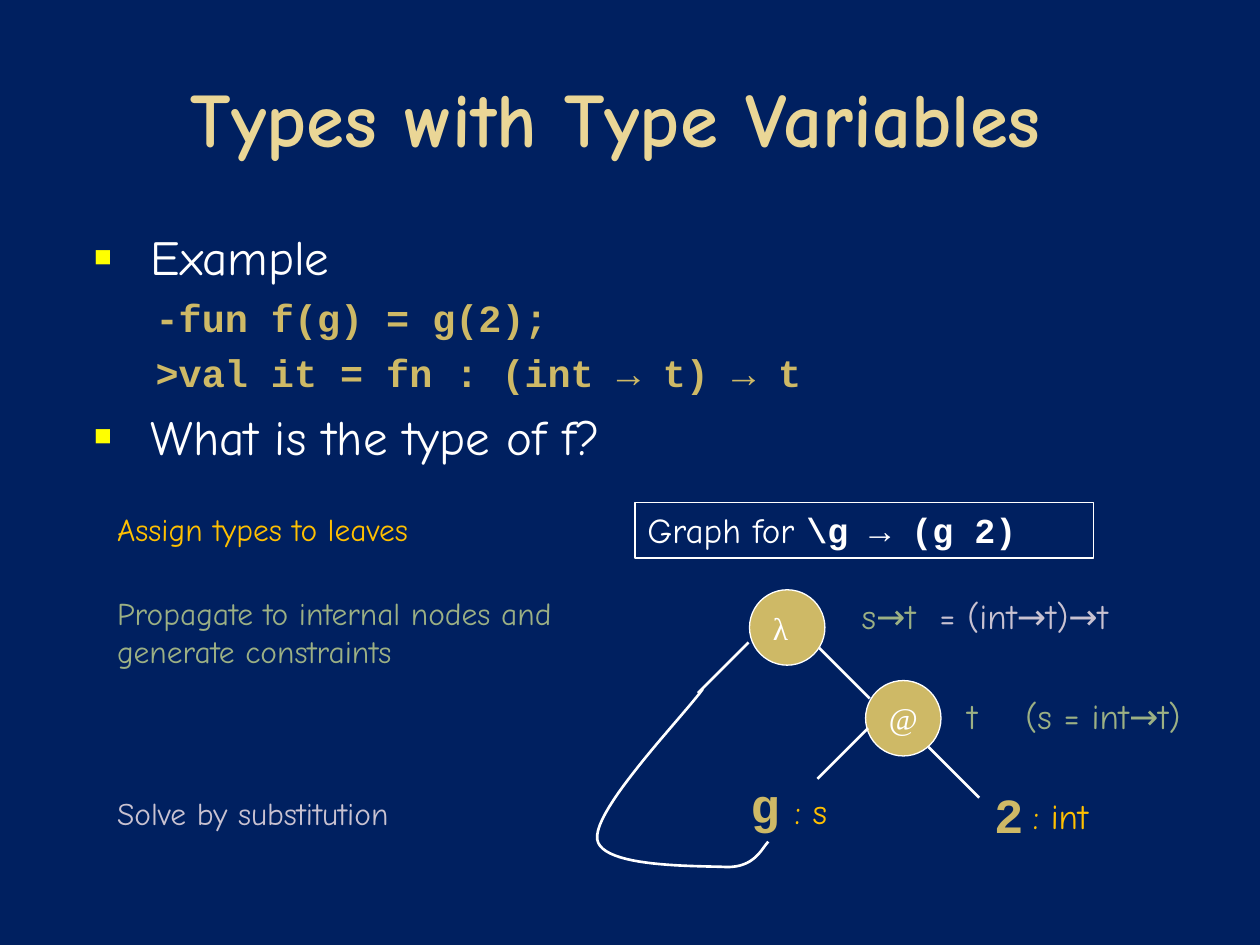
"""Build the slide on types with type variables."""
from dataclasses import dataclass
from typing import Any, Optional

from lxml import etree
from pptx import Presentation
from pptx import util as u
from pptx.dml.color import RGBColor
from pptx.enum import shapes, text
from pptx.oxml.ns import qn


@dataclass(frozen=True)
class Theme:
    """Colours, typefaces and sizes."""
    back: str = "002060"
    title: str = "EAD696"
    white: str = "FFFFFF"
    gold: str = "CEB966"
    bullet: str = "FFFF00"
    leaf: str = "FFC000"
    inner: str = "9CB084"
    solved: str = "C9C2D1"
    hand: str = "Comic Neue"
    code: str = "Courier New"
    serif: str = "Times New Roman"
    title_size: int = 44
    head_size: int = 28
    code_size: int = 22
    type_size: int = 20
    step_size: int = 18


T = Theme()


@dataclass(frozen=True)
class Run:
    """A piece of text in one format."""
    words: str
    color: str = T.white
    size: int = T.type_size
    font: str = T.hand
    bold: bool = False


@dataclass(frozen=True)
class Label:
    """A run at a place, in centimetres."""
    left: float
    top: float
    width: float
    height: float
    run: Run


@dataclass(frozen=True)
class BodyLine:
    """A paragraph of the body with its spacing and indents."""
    run: Run
    before: float
    margin: float
    indent: float
    bullet: Optional[str] = None


@dataclass(frozen=True)
class Edge:
    """A diagonal line from a start, with its horizontal direction."""
    x: float
    y: float
    side: int


def head(words: str) -> BodyLine:
    """Return a bulleted line."""
    return BodyLine(Run(words, size=T.head_size), 6, 1.52, -1.14, "■")


def code(words: str) -> BodyLine:
    """Return a line of code."""
    return BodyLine(Run(words, T.gold, T.code_size, T.code, True), 5, 2.41, -0.79)


def step(top: float, words: str, color: str, width: float = 9.32, height: float = 1.02) -> Label:
    """Return a step of the method in the left column."""
    return Label(2.11, top, width, height, Run(words, color, T.step_size))


def leaf(left: float, top: float, width: float, words: str) -> Label:
    """Return a leaf of the graph."""
    return Label(left, top, width, 1.45, Run(words, T.gold, T.head_size, T.code, True))


def note(left: float, top: float, width: float, words: str, color: str) -> Label:
    """Return a type written beside a node."""
    return Label(left, top, width, 1.12, Run(words, color))


BODY = [head("Example"), code("-fun f(g) = g(2);"),
        code(">val it = fn : (int → t) → t"), head("What is the type of f?")]
LABELS = [
    step(10.16, "Assign types to leaves", T.leaf),
    step(11.86, "Propagate to internal nodes and generate constraints", T.inner, 10.8, 1.8),
    step(15.88, "Solve by substitution", T.solved),
    note(20.57, 15.9, 2.24, ": int", T.leaf),
    note(15.77, 15.8, 1.96, ": s", T.leaf),
    note(19.25, 13.87, 1, "t", T.inner),
    note(20.42, 13.87, 4.4, "(s = int→t)", T.inner),
    note(17.12, 11.86, 2.18, "s→t", T.inner),
    note(18.69, 11.86, 5.56, "= (int→t)→t", T.solved),
    leaf(19.79, 15.7, 1.24, "2"),
    leaf(14.88, 15.49, 2.34, "g"),
]
NODES = [Label(x, y, 1.52, 1.52, Run(sign, T.white, T.step_size, T.serif))
         for x, y, sign in ((15.11, 11.89, "λ"), (17.45, 13.72, "@"))]
EDGES = [Edge(15.09, 12.95, -1), Edge(16.51, 13.06, 1),
         Edge(18.72, 15.06, 1), Edge(17.5, 14.68, -1)]
EDGE_SPAN = 1.02
BINDING = [(15.49, 16.97), (15.37, 17.07), (15.24, 17.48), (14.66, 17.48), (14.07, 17.45),
           (12.12, 17.5), (12.04, 16.92), (11.96, 16.31), (13.72, 14.5), (14.17, 13.89)]


def set_all(obj: Any, values: dict[str, Any]) -> None:
    """Set the attributes of an object from a dict."""
    for name, value in values.items():
        setattr(obj, name, value)


def add_run(p: Any, run: Run) -> None:
    """Append a formatted run to a paragraph."""
    r = p.add_run()
    r.text = run.words
    set_all(r.font, {"size": u.Pt(run.size), "name": run.font, "bold": run.bold})
    r.font.color.rgb = RGBColor.from_string(run.color)


def add_box(s: Any, left: float, top: float, width: float, height: float) -> Any:
    """Add a wrapping text box and return its frame."""
    tf = s.shapes.add_textbox(*map(u.Cm, (left, top, width, height))).text_frame
    tf.word_wrap = True
    return tf


def add_label(s: Any, label: Label) -> Any:
    """Add a text box with one run and return its frame."""
    tf = add_box(s, label.left, label.top, label.width, label.height)
    add_run(tf.paragraphs[0], label.run)
    return tf


def add_bullet(p: Any, char: str) -> None:
    """Give a paragraph a small coloured bullet."""
    pPr = p._p.get_or_add_pPr()
    color = etree.SubElement(pPr, qn("a:buClr"))
    etree.SubElement(color, qn("a:srgbClr"), val=T.bullet)
    etree.SubElement(pPr, qn("a:buSzPct"), val="60000")
    etree.SubElement(pPr, qn("a:buFont"), typeface="Arial")
    etree.SubElement(pPr, qn("a:buChar"), char=char)


def add_body(s: Any) -> None:
    """Add the example and the question."""
    tf = add_box(s, 1.27, 4.45, 22.71, 5.51)
    for i, line in enumerate(BODY):
        p = tf.add_paragraph() if i else tf.paragraphs[0]
        p.space_before = u.Pt(line.before if i else 0)
        set_all(p._p.get_or_add_pPr(), {"marL": u.Cm(line.margin), "indent": u.Cm(line.indent)})
        for name, value in (("marL", line.margin), ("indent", line.indent)):
            p._p.get_or_add_pPr().set(name, str(int(u.Cm(value))))
        if line.bullet:
            add_bullet(p, line.bullet)
        add_run(p, line.run)


def outline(sp: Any, width: float) -> None:
    """Give a shape a white outline."""
    sp.line.color.rgb = RGBColor.from_string(T.white)
    sp.line.width = u.Pt(width)


def add_outlined(s: Any, kind: Any, left: float, top: float, width: float, height: float,
                 runs: list[Run], fill: Optional[str] = None) -> Any:
    """Add an outlined shape with left-aligned runs and return its frame."""
    sp = s.shapes.add_shape(kind, *map(u.Cm, (left, top, width, height)))
    sp.shadow.inherit = False
    outline(sp, 0.75)
    if fill:
        sp.fill.solid()
        sp.fill.fore_color.rgb = RGBColor.from_string(fill)
    else:
        sp.fill.background()
    tf = sp.text_frame
    p = tf.paragraphs[0]
    p.alignment = text.PP_ALIGN.LEFT
    for run in runs:
        add_run(p, run)
    return tf


def add_edge(s: Any, edge: Edge) -> None:
    """Add an edge of the graph."""
    ends = (edge.x, edge.y, edge.x + edge.side * EDGE_SPAN, edge.y + EDGE_SPAN)
    sp = s.shapes.add_connector(shapes.MSO_CONNECTOR.STRAIGHT, *map(u.Cm, ends))
    outline(sp, 1.5)
    etree.SubElement(sp._element.spPr, qn("a:effectLst"))


def add_curve(s: Any, points: list[tuple[float, float]], steps: int = 24) -> None:
    """Add a chain of cubic curves as a fine open outline."""
    curve = [points[0]]
    for i in range(0, len(points) - 1, 3):
        for t in (k / steps for k in range(1, steps + 1)):
            weights = ((1 - t) ** 3, 3 * t * (1 - t) ** 2, 3 * t * t * (1 - t), t ** 3)
            curve.append(tuple(sum(w * q[axis] for w, q in zip(weights, points[i:i + 4]))
                               for axis in (0, 1)))
    emu = [(u.Cm(x), u.Cm(y)) for x, y in curve]
    builder = s.shapes.build_freeform(*emu[0])
    builder.add_line_segments(emu[1:], close=False)
    sp = builder.convert_to_shape()
    sp.shadow.inherit = False
    sp.fill.background()
    outline(sp, 1.5)


def main() -> None:
    """Build and save the slide."""
    prs = Presentation()
    set_all(prs, {"slide_width": u.Cm(25.4), "slide_height": u.Cm(19.05)})
    s = prs.slides.add_slide(prs.slide_layouts[6])
    s.background.fill.solid()
    s.background.fill.fore_color.rgb = RGBColor.from_string(T.back)
    tf = add_label(s, Label(1.27, 0.76, 22.86, 3.18, Run(
        "Types with Type Variables ", T.title, T.title_size, bold=True)))
    tf.vertical_anchor = text.MSO_ANCHOR.MIDDLE
    tf.paragraphs[0].alignment = text.PP_ALIGN.CENTER
    add_body(s)
    for node in NODES:
        tf = add_outlined(s, shapes.MSO_SHAPE.OVAL, node.left, node.top, node.width,
                          node.height, [node.run], T.gold)
        set_all(tf, {"word_wrap": False, "vertical_anchor": text.MSO_ANCHOR.MIDDLE})
    for edge in EDGES:
        add_edge(s, edge)
    add_curve(s, BINDING)
    tf = add_outlined(s, shapes.MSO_SHAPE.RECTANGLE, 12.8, 10.13, 9.25, 1.12,
                      [Run("Graph for "), Run("\\g → (g 2)", font=T.code, bold=True)])
    set_all(tf, {"word_wrap": True, "vertical_anchor": text.MSO_ANCHOR.TOP})
    for label in LABELS:
        add_label(s, label)
    prs.save("out.pptx")


if __name__ == "__main__":
    main()
